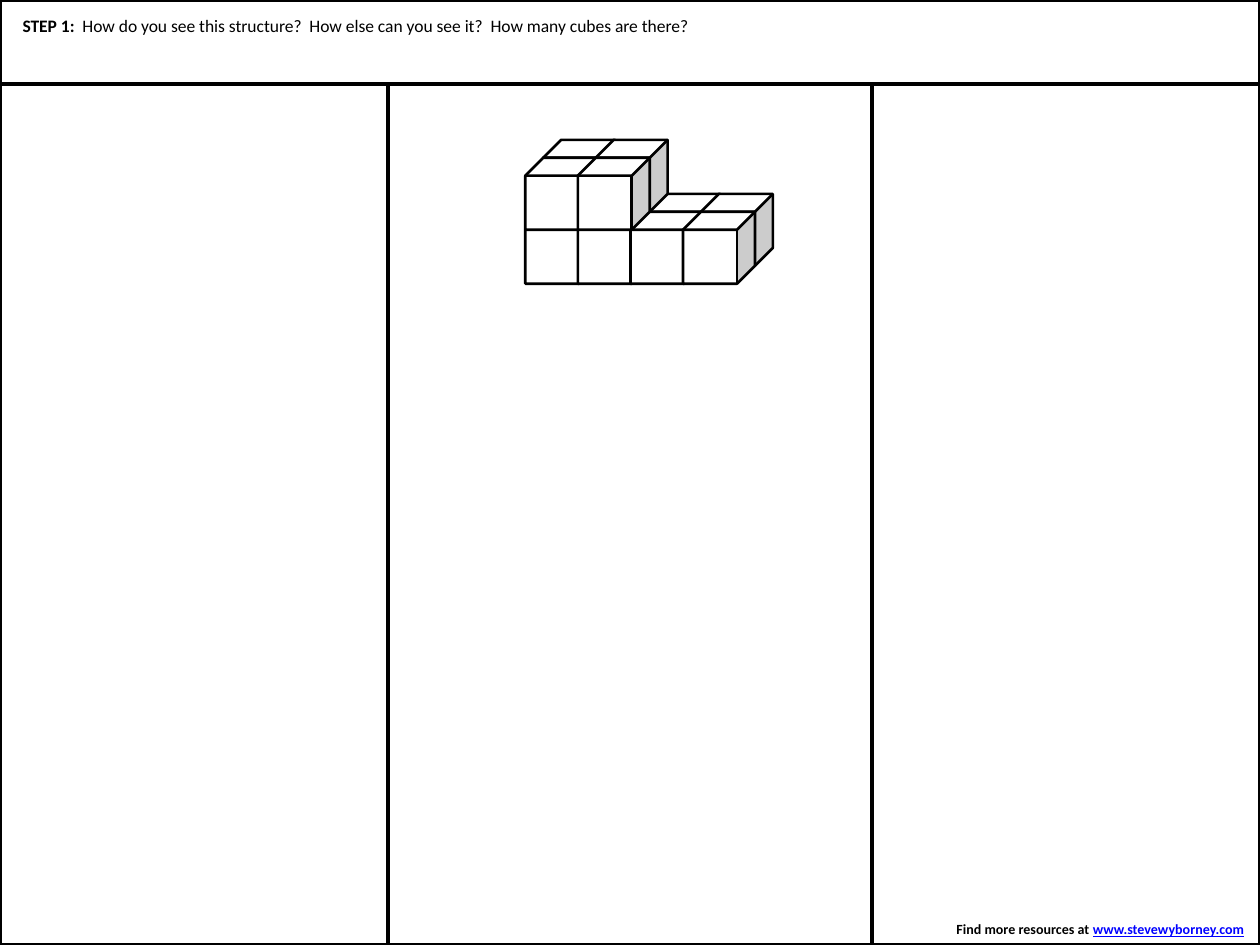
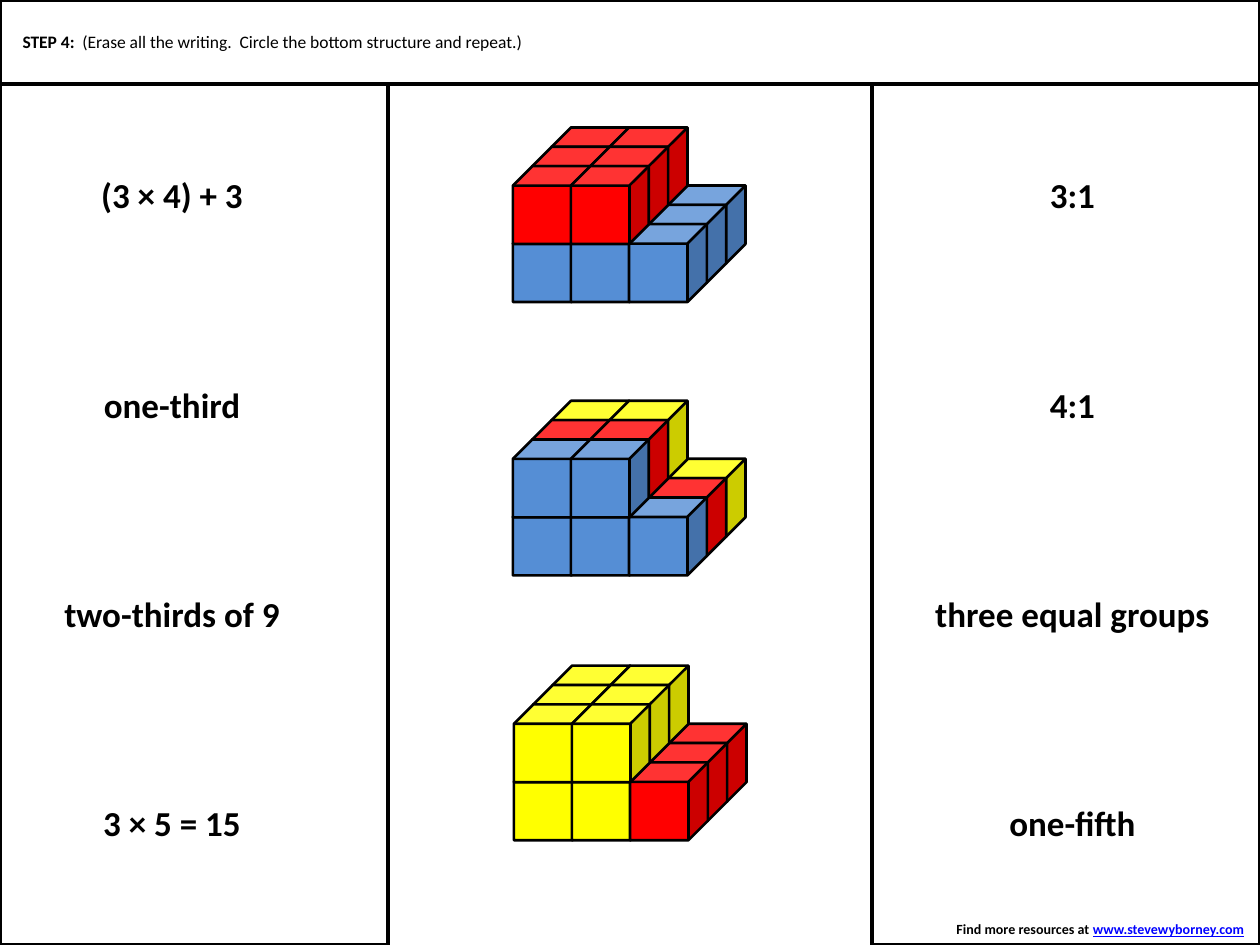
import pptx
import pptx.util
import pptx.dml.color
import pptx.enum.shapes
import pptx.enum.text

Cm = pptx.util.Cm
Pt = pptx.util.Pt
RGBColor = pptx.dml.color.RGBColor
Shape = pptx.enum.shapes.MSO_SHAPE
Align = pptx.enum.text.PP_ALIGN
Anchor = pptx.enum.text.MSO_ANCHOR
AutoSize = pptx.enum.text.MSO_AUTO_SIZE

BLACK = RGBColor(0x00, 0x00, 0x00)
WHITE = RGBColor(0xFF, 0xFF, 0xFF)
RED = RGBColor(0xFF, 0x00, 0x00)
YELLOW = RGBColor(0xFF, 0xFF, 0x00)
BLUE = RGBColor(0x55, 0x8E, 0xD5)
LINK_BLUE = RGBColor(0x00, 0x00, 0xFF)

PAGE_WIDTH, PAGE_HEIGHT = 25.4, 19.05
SIDE_WIDTH = 7.82
BAND_HEIGHT = 1.7
LABEL_TOP, LABEL_PITCH, LABEL_HEIGHT = 3.38, 4.22, 1.12
LEFT_CENTRE, RIGHT_CENTRE = 3.47, 21.62


def add_span(para, text, size=10, bold=False, underline=None, color=BLACK):
    span = para.add_run()
    span.text = text
    span.font.name = "Calibri"
    span.font.size = Pt(size)
    span.font.bold = bold
    span.font.underline = underline
    span.font.color.rgb = color


class Worksheet:
    font_size_label = 20
    font_size_footer = 8

    def __init__(self, deck):
        self.deck = deck
        self.page = None

    def start_page(self):
        self.page = self.deck.slides.add_slide(self.deck.slide_layouts[5])

    def outline(self, shapes, kind, left, top, width, height, fill=None, weight=2):
        shape = shapes.add_shape(kind, Cm(left), Cm(top), Cm(width), Cm(height))
        shape.shadow.inherit = False
        if fill is None:
            shape.fill.background()
        else:
            shape.fill.solid()
            shape.fill.fore_color.rgb = fill
        shape.line.color.rgb = BLACK
        shape.line.width = Pt(weight)

    def frame(self, with_middle):
        right_edge = PAGE_WIDTH - SIDE_WIDTH
        columns = [(0, SIDE_WIDTH), (right_edge, SIDE_WIDTH)]
        if with_middle:
            columns.insert(0, (SIDE_WIDTH, right_edge - SIDE_WIDTH))
        for left, width in columns:
            self.outline(self.page.shapes, Shape.RECTANGLE, left, 0, width, PAGE_HEIGHT)
        self.outline(self.page.shapes, Shape.RECTANGLE, 0, 0, PAGE_WIDTH, BAND_HEIGHT, WHITE)

    def step(self, name, prompt, height):
        title = self.page.shapes.title
        title.element.getparent().append(title.element)
        title.left, title.top, title.width, title.height = Cm(0.2), Cm(0.2), Cm(24.97), Cm(height)
        title.fill.solid()
        title.fill.fore_color.rgb = WHITE
        frame = title.text_frame
        frame.auto_size = AutoSize.NONE
        frame.vertical_anchor = Anchor.MIDDLE
        para = frame.paragraphs[0]
        para.alignment = Align.LEFT
        add_span(para, name + ":  ", bold=True)
        add_span(para, prompt)

    def text_box(self, left, top, width, height, alignment):
        box = self.page.shapes.add_textbox(Cm(left), Cm(top), Cm(width), Cm(height))
        box.text_frame.word_wrap = False
        box.text_frame.auto_size = AutoSize.SHAPE_TO_FIT_TEXT
        para = box.text_frame.paragraphs[0]
        para.alignment = alignment
        return para

    def labels(self, centre, entries):
        for row, (text, width) in enumerate(entries):
            top = LABEL_TOP + row * LABEL_PITCH
            para = self.text_box(centre - width / 2, top, width, LABEL_HEIGHT, Align.CENTER)
            add_span(para, text, size=self.font_size_label, bold=True)

    def footer(self):
        para = self.text_box(18.95, 18.44, 6.45, 0.61, Align.RIGHT)
        size = self.font_size_footer
        add_span(para, "Find more resources at ", size=size, bold=True)
        add_span(para, "www.stevewyborney.com", size=size, bold=True, underline=True, color=LINK_BLUE)
        add_span(para, " ", size=size, bold=True)

    def cubes(self, left, top, slices, size, across, up, depth):
        group = self.page.shapes.add_group_shape()
        for back, levels in reversed(list(enumerate(slices))):
            for level, colors in enumerate(levels):
                for column, color in enumerate(colors):
                    self.outline(
                        group.shapes, Shape.CUBE,
                        left + column * across + back * depth,
                        top - level * up - back * depth,
                        size, size, color, 1.5)


def main():
    deck = pptx.Presentation()
    deck.slide_width, deck.slide_height = Cm(PAGE_WIDTH), Cm(PAGE_HEIGHT)
    sheet = Worksheet(deck)

    sheet.start_page()
    sheet.frame(with_middle=True)
    white_slice = ([WHITE] * 4, [WHITE] * 2)
    sheet.cubes(10.59, 4.27, [white_slice] * 2, size=1.45, across=1.06, up=1.09, depth=0.36)
    sheet.footer()
    sheet.step("STEP 1", "How do you see this structure?  How else can you see it?  "
               "How many cubes are there?", height=0.64)

    sheet.start_page()
    sheet.frame(with_middle=False)
    sheet.labels(LEFT_CENTRE, [("(3 × 4) + 3", 3.4), ("one-third", 3.3),
                               ("two-thirds of 9", 4.88), ("3 × 5 = 15", 3.28)])
    sheet.labels(RIGHT_CENTRE, [("3:1", 1.42), ("4:1", 1.42),
                                ("three equal groups", 6.1), ("one-fifth", 3.12)])
    red_on_blue = [([BLUE] * 3, [RED] * 2)] * 3
    color_slices = [
        ([BLUE] * 3, [BLUE] * 2),
        ([WHITE, WHITE, RED], [RED] * 2),
        ([WHITE, WHITE, YELLOW], [YELLOW] * 2),
    ]
    yellow_beside_red = [([YELLOW, YELLOW, RED], [YELLOW] * 2)] * 2
    yellow_beside_red.append(([YELLOW, RED, RED], [YELLOW] * 2))
    structures = [(10.34, 4.52, red_on_blue), (10.34, 10.03, color_slices),
                  (10.36, 15.37, yellow_beside_red)]
    for left, top, slices in structures:
        sheet.cubes(left, top, slices, size=1.57, across=1.17, up=1.17, depth=0.39)
    sheet.step("STEP 4", "(Erase all the writing.  Circle the bottom structure and repeat.)",
               height=1.27)
    sheet.footer()

    deck.save("out.pptx")


if __name__ == "__main__":
    main()
